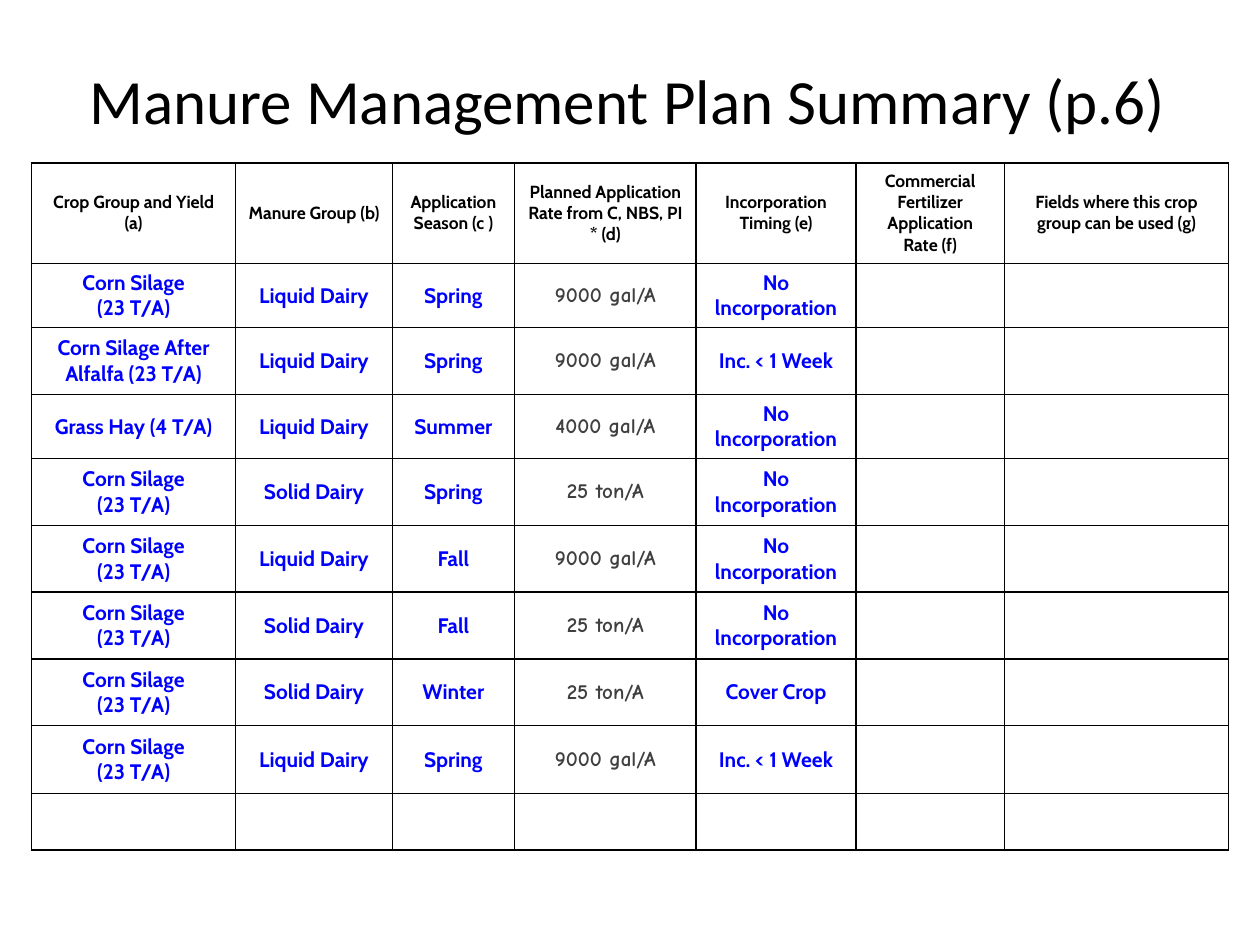
"""Builds the manure management plan summary slide."""
from dataclasses import dataclass

from lxml import etree
from pptx import Presentation
from pptx import util as u
from pptx.dml.color import RGBColor
from pptx.enum import text
from pptx.oxml import ns


@dataclass(frozen=True)
class Style:
    font: str
    size: float
    color: str
    bold: bool = False


@dataclass(frozen=True)
class Theme:
    title: Style = Style("Calibri", 36, "000000")
    header: Style = Style("Cabin", 10, "000000", True)
    entry: Style = Style("Cabin", 12, "0000FF", True)
    rate: Style = Style("Comic Neue", 12, "404040", True)
    fill: str = "FFFFFF"
    border: str = "000000"
    border_width: float = 1


@dataclass(frozen=True)
class Application:
    crop: str
    manure: str
    season: str
    rate: str
    timing: str

    def entries(self) -> list[str]:
        return [self.crop, self.manure, self.season, self.rate, self.timing]


THEME = Theme()
RATE_COLUMN = 3
SILAGE = "Corn Silage\n(23 T/A)"
LIQUID, SOLID = "Liquid Dairy", "Solid Dairy"
LIQUID_RATE, SOLID_RATE = "9000 gal/A", "25 ton/A"
SURFACE, WEEK = "No lncorporation", "Inc. < 1 Week"
HEADERS = [
    "Crop Group and Yield (a)",
    "Manure Group (b)",
    "Application Season (c )",
    "Planned Application Rate from C, NBS, PI * (d)",
    "Incorporation Timing (e)",
    "Commercial Fertilizer Application Rate (f)",
    "Fields where this crop group can be used (g)",
]
APPLICATIONS = [
    Application(SILAGE, LIQUID, "Spring", LIQUID_RATE, SURFACE),
    Application("Corn Silage After Alfalfa (23 T/A)", LIQUID, "Spring", LIQUID_RATE, WEEK),
    Application("Grass Hay (4 T/A)", LIQUID, "Summer", "4000 gal/A", SURFACE),
    Application(SILAGE, SOLID, "Spring", SOLID_RATE, SURFACE),
    Application(SILAGE, LIQUID, "Fall", LIQUID_RATE, SURFACE),
    Application(SILAGE, SOLID, "Fall", SOLID_RATE, SURFACE),
    Application(SILAGE, SOLID, "Winter", SOLID_RATE, "Cover Crop"),
    Application(SILAGE, LIQUID, "Spring", LIQUID_RATE, WEEK),
]
COLUMN_WIDTHS = [116.7, 89.5, 69.8, 103.9, 91.2, 85, 127.9]
ROW_HEIGHTS = [57.6, 36.6, 38.2, 36.6, 38.2, 38.2, 38.2, 38.2, 38.6, 32.4]


def format_text(frame, style: Style, align) -> None:
    """Apply one style to every run of a text frame."""
    frame.word_wrap = True
    frame.vertical_anchor = text.MSO_ANCHOR.MIDDLE
    for para in frame.paragraphs:
        para.alignment = align
        for span in para.runs:
            span.font.name = style.font
            span.font.size = u.Pt(style.size)
            span.font.bold = style.bold
            span.font.color.rgb = RGBColor.from_string(style.color)


def add_title(page, words: str) -> None:
    """Place the slide title."""
    box = page.shapes.add_textbox(u.Pt(51), u.Pt(28), u.Pt(641.5), u.Pt(57.6))
    frame = box.text_frame
    frame.margin_left = frame.margin_right = 0
    frame.text = words
    format_text(frame, THEME.title, text.PP_ALIGN.LEFT)


def draw_borders(cell) -> None:
    """Outline a cell on all four sides."""
    properties = cell._tc.get_or_add_tcPr()
    for side in ("lnL", "lnR", "lnT", "lnB"):
        line = etree.SubElement(properties, ns.qn(f"a:{side}"), w=str(u.Pt(THEME.border_width)))
        fill = etree.SubElement(line, ns.qn("a:solidFill"))
        etree.SubElement(fill, ns.qn("a:srgbClr"), val=THEME.border)


def fill_cell(cell, words: str, style: Style) -> None:
    """Give a cell its borders, fill and text."""
    draw_borders(cell)
    cell.fill.solid()
    cell.fill.fore_color.rgb = RGBColor.from_string(THEME.fill)
    cell.vertical_anchor = text.MSO_ANCHOR.MIDDLE
    if words:
        cell.text_frame.text = words
        format_text(cell.text_frame, style, text.PP_ALIGN.CENTER)


def cell_style(row: int, column: int) -> Style:
    """Choose the style for a table position."""
    if row == 0:
        return THEME.header
    return THEME.rate if column == RATE_COLUMN else THEME.entry


def add_plan_table(page) -> None:
    """Draw the plan table with its header and blank closing row."""
    frame = page.shapes.add_table(
        len(ROW_HEIGHTS), len(COLUMN_WIDTHS), u.Pt(18), u.Pt(93),
        u.Pt(sum(COLUMN_WIDTHS)), u.Pt(sum(ROW_HEIGHTS)),
    )
    table = frame.table
    table.first_row = table.horz_banding = False
    for column, width in zip(table.columns, COLUMN_WIDTHS):
        column.width = u.Pt(width)
    for row, height in zip(table.rows, ROW_HEIGHTS):
        row.height = u.Pt(height)
    content = [HEADERS, *(item.entries() for item in APPLICATIONS), []]
    for row, entries in enumerate(content):
        for column in range(len(COLUMN_WIDTHS)):
            words = entries[column] if column < len(entries) else ""
            fill_cell(table.cell(row, column), words, cell_style(row, column))


def main() -> None:
    """Build and save the deck."""
    deck = Presentation()
    deck.slide_width, deck.slide_height = u.Pt(720), u.Pt(540)
    page = deck.slides.add_slide(deck.slide_layouts[6])
    add_plan_table(page)
    add_title(page, "Manure Management Plan Summary (p.6)")
    deck.save("out.pptx")


if __name__ == "__main__":
    main()
